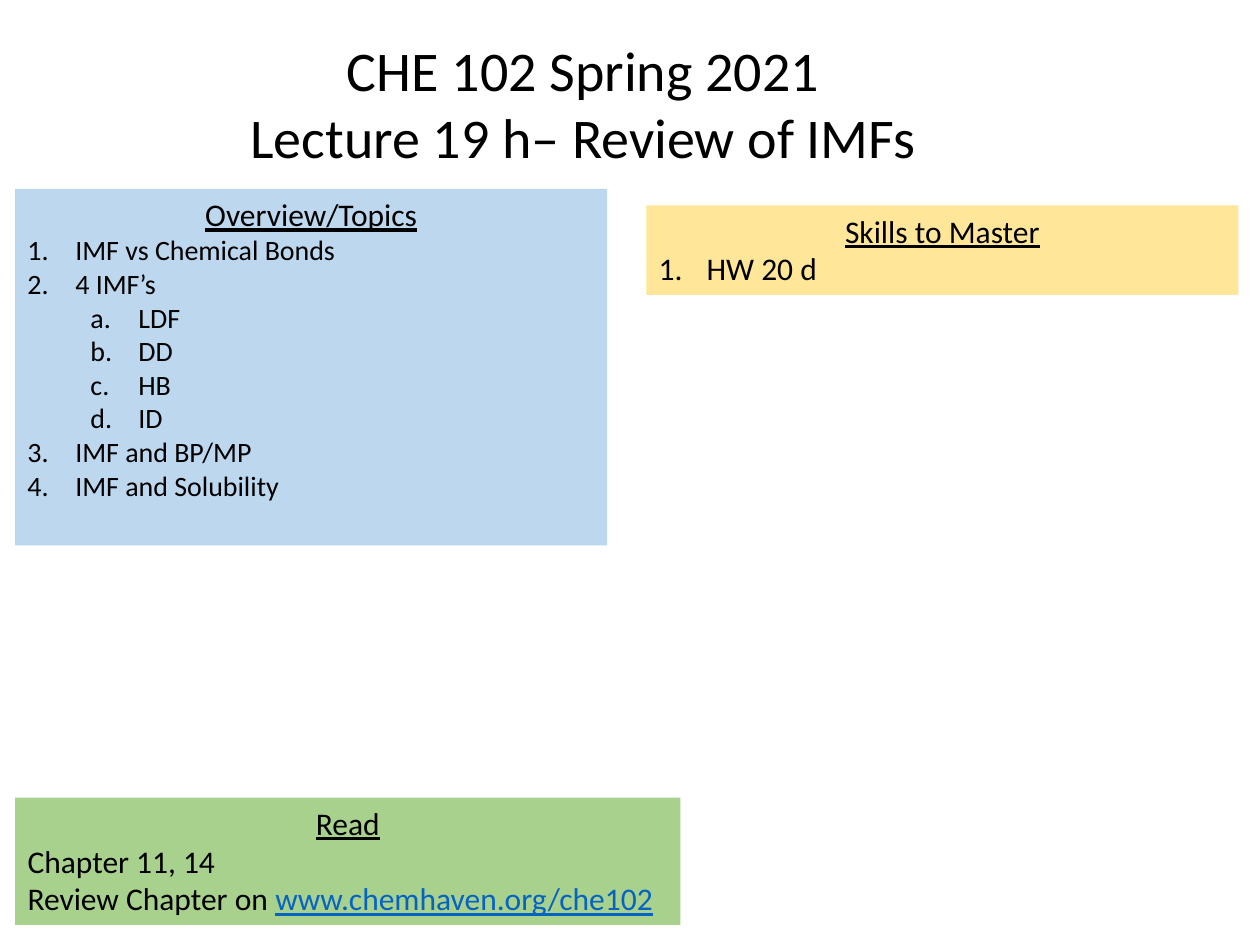
from lxml import etree
from pptx import Presentation
from pptx import util as u
from pptx.dml.color import RGBColor
from pptx.enum import shapes, text
from pptx.oxml.ns import qn

BLACK = RGBColor(0, 0, 0)
BLUE = RGBColor(0xBD, 0xD7, 0xEE)
GOLD = RGBColor(0xFF, 0xE6, 0x99)
GREEN = RGBColor(0xA9, 0xD1, 0x8E)
LINK = RGBColor(0x05, 0x63, 0xC1)
CENTER = text.PP_ALIGN.CENTER
LEFT = text.PP_ALIGN.LEFT
NUMBERS = ("arabicPeriod", "alphaLcPeriod")


def number(para, level):
    """Number a paragraph: 1. 2. at level 0, a. b. at level 1."""
    para.level = level
    props = para._p.get_or_add_pPr()
    hang = u.Inches(0.38)
    props.set("marL", str(hang + level * u.Inches(0.5)))
    props.set("indent", str(-hang))
    etree.SubElement(props, qn("a:buFont"), typeface="+mj-lt")
    etree.SubElement(props, qn("a:buAutoNum"), type=NUMBERS[level])


def write(para, words, size=18, color=BLACK, line=False, align=LEFT, level=None):
    """Add a run to a paragraph; a level makes the paragraph a list item."""
    if level is not None:
        number(para, level)
    para.alignment = align
    run = para.add_run()
    run.text = words
    font = run.font
    font.name, font.size, font.underline = "Calibri", u.Pt(size), line
    font.color.rgb = color


class Page:
    """The current slide and its style."""

    def __init__(self, deck):
        self.slide = deck.slides.add_slide(deck.slide_layouts[6])

    def title(self, box, lines):
        frame = self.slide.shapes.add_textbox(*map(u.Inches, box)).text_frame
        frame.word_wrap = False
        for i, words in enumerate(lines):
            para = frame.add_paragraph() if i else frame.paragraphs[0]
            write(para, words, size=32, align=CENTER)

    def panel(self, box, fill, head):
        """Draw a filled box with an underlined heading; return its text frame."""
        shape = self.slide.shapes.add_shape(
            shapes.MSO_SHAPE.RECTANGLE, *map(u.Inches, box))
        shape.shadow.inherit = False
        shape.fill.solid()
        shape.fill.fore_color.rgb = fill
        shape.line.fill.background()
        frame = shape.text_frame
        frame.word_wrap = True
        frame.vertical_anchor = text.MSO_ANCHOR.TOP
        write(frame.paragraphs[0], head, line=True, align=CENTER)
        return frame


def main():
    deck = Presentation()
    deck.slide_width, deck.slide_height = u.Inches(10), u.Inches(7.5)
    page = Page(deck)

    topics = page.panel((0.12, 1.5, 4.7, 2.83), BLUE, "Overview/Topics")
    for level, words in (
        (0, "IMF vs Chemical Bonds"),
        (0, "4 IMF’s"),
        (1, "LDF"),
        (1, "DD"),
        (1, "HB"),
        (1, "ID"),
        (0, "IMF and BP/MP"),
        (0, "IMF and Solubility"),
    ):
        write(topics.add_paragraph(), words, size=16, level=level)

    skills = page.panel((5.13, 1.63, 4.7, 0.71), GOLD, "Skills to Master")
    write(skills.add_paragraph(), "HW 20 d", level=0)

    read = page.panel((0.12, 6.33, 5.28, 1.01), GREEN, "Read")
    write(read.add_paragraph(), "Chapter 11, 14")
    review = read.add_paragraph()
    write(review, "Review Chapter on ")
    write(review, "www.chemhaven.org/che102", color=LINK, line=True)

    page.title((1.86, 0.23, 5.54, 1.18),
               ("CHE 102 Spring 2021", "Lecture 19 h– Review of IMFs"))
    deck.save("out.pptx")


if __name__ == "__main__":
    main()
